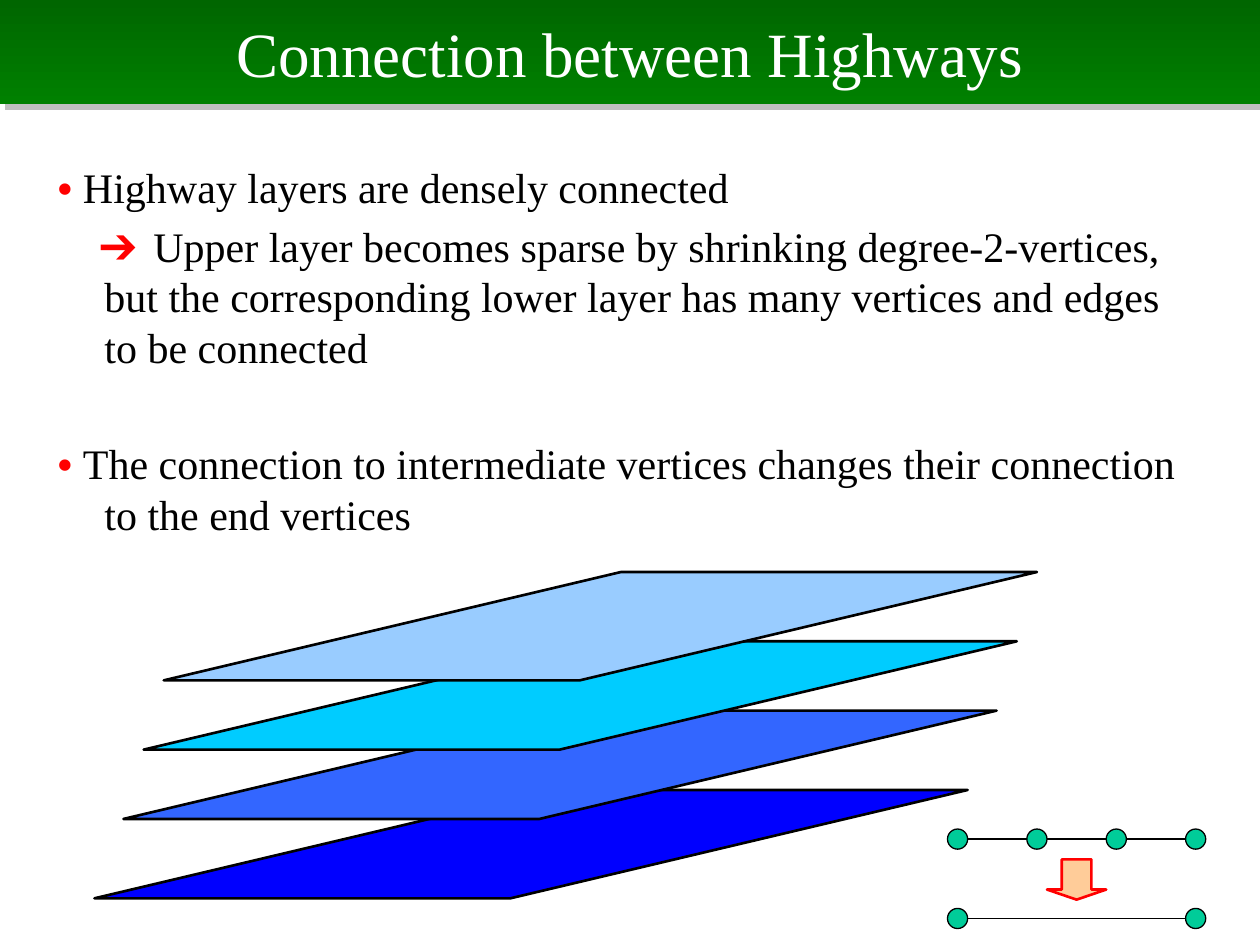
from lxml.etree import SubElement
from pptx import Presentation
from pptx.dml.color import RGBColor
from pptx.enum.shapes import MSO_CONNECTOR, MSO_SHAPE
from pptx.enum.text import MSO_ANCHOR, PP_ALIGN
from pptx.oxml.ns import qn
from pptx.util import Inches, Pt

BLACK = RGBColor(0x00, 0x00, 0x00)
WHITE = RGBColor(0xFF, 0xFF, 0xFF)
RED = RGBColor(0xFF, 0x00, 0x00)
PEACH = RGBColor(0xFF, 0xCC, 0x99)
VERTEX_GREEN = RGBColor(0x00, 0xCC, 0x99)
DARK_GREEN = RGBColor(0x00, 0x66, 0x00)
GREEN = RGBColor(0x00, 0x80, 0x00)
BLUE = RGBColor(0x00, 0x00, 0xFF)
MID_BLUE = RGBColor(0x33, 0x66, 0xFF)
CYAN = RGBColor(0x00, 0xCC, 0xFF)
PALE_BLUE = RGBColor(0x99, 0xCC, 0xFF)
FONT = "Times New Roman"

prs = Presentation()
prs.slide_width = Inches(10)
prs.slide_height = Inches(7.5)
slide = prs.slides.add_slide(prs.slide_layouts[6])


def add_figure(kind, left, top, width, height, fill, line, weight):
    figure = slide.shapes.add_shape(
        kind, Inches(left), Inches(top), Inches(width), Inches(height))
    figure.shadow.inherit = False
    figure.fill.solid()
    figure.fill.fore_color.rgb = fill
    figure.line.color.rgb = line
    figure.line.width = Pt(weight)
    return figure


def add_edge(start, end, y):
    edge = slide.shapes.add_connector(
        MSO_CONNECTOR.STRAIGHT, Inches(start), Inches(y), Inches(end), Inches(y))
    edge.line.color.rgb = BLACK
    edge.line.width = Pt(0.75)
    SubElement(edge._element.spPr, qn("a:effectLst"))


banner = slide.shapes.add_shape(
    MSO_SHAPE.RECTANGLE, 0, 0, prs.slide_width, Inches(0.83))
banner.fill.gradient()
banner.fill.gradient_angle = 270
for stop, color in zip(banner.fill.gradient_stops, (DARK_GREEN, GREEN)):
    stop.color.rgb = color
banner.line.fill.background()
banner.shadow.inherit = False
effects = banner._element.spPr.find(qn("a:effectLst"))
shadow = SubElement(effects, qn("a:outerShdw"), dist=str(Pt(4.2)),
                    dir="2700000", algn="ctr", rotWithShape="0")
shadow_color = SubElement(shadow, qn("a:srgbClr"), val="808080")
SubElement(shadow_color, qn("a:alpha"), val="50000")
banner.text_frame.vertical_anchor = MSO_ANCHOR.MIDDLE
title = banner.text_frame.paragraphs[0]
title.text = "Connection between Highways"
title.alignment = PP_ALIGN.CENTER
title.font.name = FONT
title.font.size = Pt(36)
title.font.color.rgb = WHITE

body = slide.shapes.add_textbox(
    Inches(0.35), Inches(1.23), Inches(9.29), Inches(3.86)).text_frame
body.word_wrap = True
points = [
    ("• ", "Highway layers are densely connected", 5, -0.37, 0),
    ("➔ ", "Upper layer becomes sparse by shrinking degree-2-vertices, "
     "but the corresponding lower layer has many vertices and edges "
     "to be connected", 5, -0.04, 1.7),
    ("• ", "The connection to intermediate vertices changes their connection "
     "to the end vertices", 38, -0.37, 0),
]
for index, (marker, wording, gap, indent, tracking) in enumerate(points):
    point = body.paragraphs[0] if index == 0 else body.add_paragraph()
    point.space_before = Pt(gap)
    point.font.name = FONT
    point.font.size = Pt(24)
    properties = point._p.get_or_add_pPr()
    properties.set("marL", str(Inches(0.38)))
    properties.set("indent", str(Inches(indent)))
    for text, color, bold in ((marker, RED, True), (wording, BLACK, False)):
        run = point.add_run()
        run.text = text
        run.font.color.rgb = color
        run.font.bold = bold
    point.runs[0]._r.get_or_add_rPr().set("spc", str(round(tracking * 100)))

layers = [(0.75, 6.27, BLUE), (0.98, 5.64, MID_BLUE),
          (1.14, 5.09, CYAN), (1.3, 4.54, PALE_BLUE)]
for left, top, color in layers:
    layer = add_figure(MSO_SHAPE.PARALLELOGRAM, left, top, 6.93, 0.86,
                       color, BLACK, 1.5)
    layer.adjustments[0] = 4.22

VERTEX_SIZE = 0.16
full_path = [7.6 + 0.63 * step for step in range(4)]
shrunk_path = [full_path[0], full_path[-1]]
for path_vertices, y in ((full_path, 6.66), (shrunk_path, 7.29)):
    for start, end in zip(path_vertices, path_vertices[1:]):
        add_edge(start, end, y)
    for x in path_vertices:
        add_figure(MSO_SHAPE.OVAL, x - VERTEX_SIZE / 2, y - VERTEX_SIZE / 2,
                   VERTEX_SIZE, VERTEX_SIZE, VERTEX_GREEN, BLACK, 0.75)

shrink_arrow = add_figure(MSO_SHAPE.DOWN_ARROW, 8.31, 6.82, 0.47, 0.32,
                          PEACH, RED, 1.5)
shrink_arrow.adjustments[0] = 0.5
shrink_arrow.adjustments[1] = 0.25

prs.save("out.pptx")
